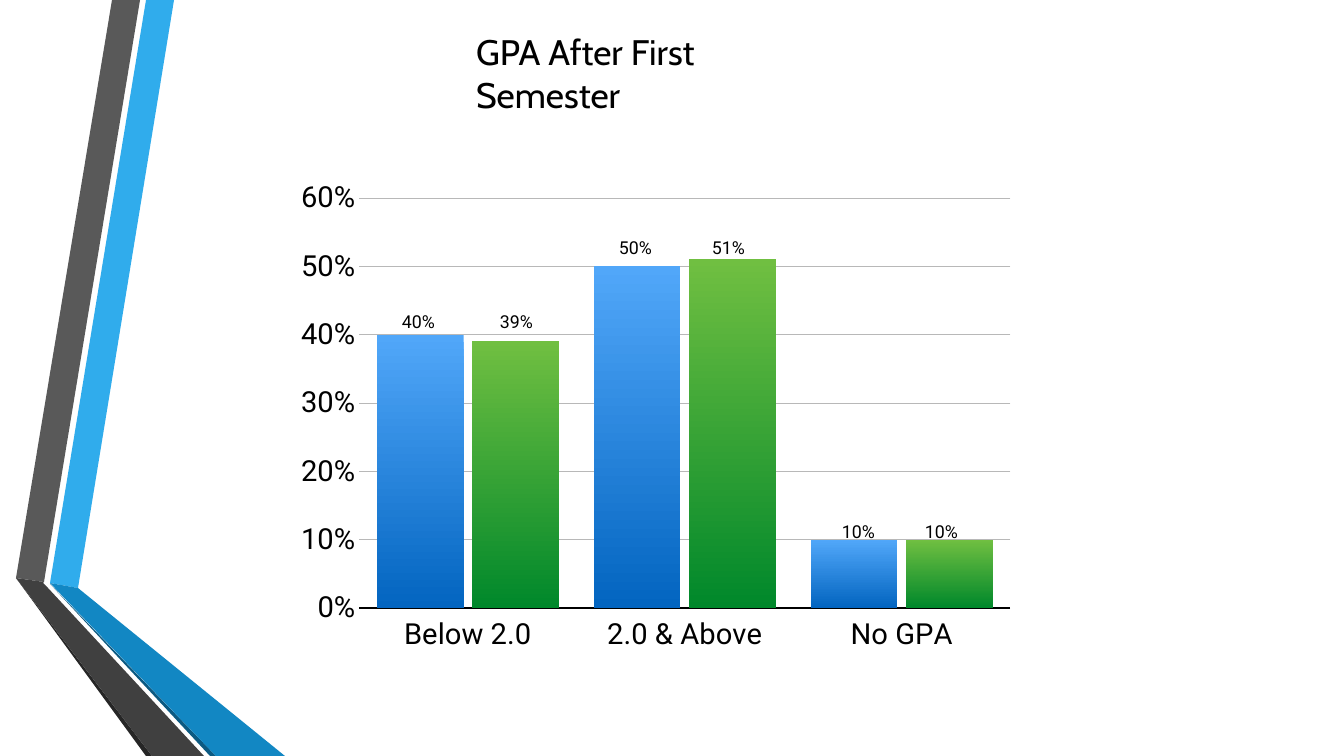
import lxml.etree
import pptx
import pptx.chart.data
import pptx.dml.color
import pptx.enum.chart
import pptx.enum.text
import pptx.oxml.ns
import pptx.util

RGBColor = pptx.dml.color.RGBColor
Pt = pptx.util.Pt
EMU_PER_PX = 914400 / 100.8

BLACK = RGBColor(0x00, 0x00, 0x00)
GRID_GREY = RGBColor(0xB8, 0xB8, 0xB8)
SKY = RGBColor(0x30, 0xAC, 0xEC)
BLUE = RGBColor(0x12, 0x87, 0xC3)
DEEP_BLUE = RGBColor(0x0C, 0x5A, 0x82)
GREY = RGBColor(0x59, 0x59, 0x59)
DARK_GREY = RGBColor(0x40, 0x40, 0x40)
CHARCOAL = RGBColor(0x26, 0x26, 0x26)
BLUE_BAR = (RGBColor(0x51, 0xA7, 0xF9), RGBColor(0x03, 0x65, 0xC0))
GREEN_BAR = (RGBColor(0x70, 0xBF, 0x41), RGBColor(0x00, 0x88, 0x2B))


def px(length):
    return pptx.util.Emu(round(length * EMU_PER_PX))


def add_label(text, box, font_name, size, margin, wrap, anchor):
    label = slide.shapes.add_textbox(*map(px, box))
    frame = label.text_frame
    frame.margin_left = frame.margin_right = px(margin)
    frame.margin_top = frame.margin_bottom = px(margin)
    frame.word_wrap = wrap
    frame.vertical_anchor = anchor
    paragraph = frame.paragraphs[0]
    paragraph.text = text
    paragraph.font.name = font_name
    paragraph.font.size = Pt(size)
    paragraph.font.color.rgb = BLACK


presentation = pptx.Presentation()
presentation.slide_width = px(1344)
presentation.slide_height = px(756)
slide = presentation.slides.add_slide(presentation.slide_layouts[6])

# Folded ribbons on the left edge
ribbons = [
    (SKY, [(50, 583), (78, 588), (174, 0), (146, 0)]),
    (GREY, [(140, 0), (112, 0), (16, 578), (44, 582)]),
    (CHARCOAL, [(16, 578), (146, 756), (152, 756)]),
    (DEEP_BLUE, [(50, 584), (210, 756), (216, 756)]),
    (BLUE, [(50, 583), (216, 756), (285, 756), (78, 588)]),
    (DARK_GREY, [(204, 756), (48, 588), (43, 583), (44, 582), (16, 578), (152, 756)]),
]
for color, points in ribbons:
    outline = slide.shapes.build_freeform(*points[0], scale=EMU_PER_PX)
    outline.add_line_segments(points[1:], close=True)
    ribbon = outline.convert_to_shape()
    ribbon.shadow.inherit = False
    ribbon.fill.solid()
    ribbon.fill.fore_color.rgb = color
    ribbon.line.fill.background()

# GPA chart
gpa_data = pptx.chart.data.CategoryChartData(number_format="0%")
gpa_data.categories = ["Below 2.0", "2.0 & Above", "No GPA"]
for shares in ([0.4, 0.5, 0.1], [0.39, 0.51, 0.1]):
    gpa_data.add_series("", shares)
gpa_chart = slide.shapes.add_chart(
    pptx.enum.chart.XL_CHART_TYPE.COLUMN_CLUSTERED,
    px(301), px(159), px(710), px(493), gpa_data).chart
gpa_chart.has_title = False
gpa_chart.has_legend = False
gpa_chart.font.name = "Cabin"
gpa_chart.font.size = Pt(10)
gpa_chart.font.color.rgb = BLACK

bars = gpa_chart.plots[0]
bars.gap_width = 40
bars.overlap = -10
bars.vary_by_categories = False
for series, shades in zip(bars.series, (BLUE_BAR, GREEN_BAR)):
    fill = series.format.fill
    fill.gradient()
    fill.gradient_angle = 270
    for stop, position, shade in zip(fill.gradient_stops, (0, 1), shades):
        stop.position = position
        stop.color.rgb = shade
    series.format.line.fill.background()

groups, percents = gpa_chart.category_axis, gpa_chart.value_axis
for axis in (groups, percents):
    axis.major_tick_mark = axis.minor_tick_mark = pptx.enum.chart.XL_TICK_MARK.NONE
    axis.tick_labels.font.name = "Roboto"
    axis.tick_labels.font.size = Pt(20.9)
    axis.tick_labels.font.color.rgb = BLACK
    axis.tick_labels.number_format = "0%"
    axis.tick_labels.number_format_is_linked = False
groups.tick_label_position = pptx.enum.chart.XL_TICK_LABEL_POSITION.LOW
groups.format.line.color.rgb = BLACK
groups.format.line.width = Pt(1)
percents.minimum_scale, percents.maximum_scale = 0, 0.6
percents.major_unit = 0.1
percents.format.line.fill.background()
percents.has_major_gridlines = True
percents.major_gridlines.format.line.color.rgb = GRID_GREY
percents.major_gridlines.format.line.width = Pt(0.25)

# Fixed inner plot area, as fractions of the chart
qn = pptx.oxml.ns.qn
plot_area = bars._element.getparent()
for old_layout in plot_area.findall(qn("c:layout")):
    plot_area.remove(old_layout)
layout = lxml.etree.Element(qn("c:layout"))
plot_area.insert(0, layout)
manual = lxml.etree.SubElement(layout, qn("c:manualLayout"))
for tag, value in [("layoutTarget", "inner"), ("xMode", "edge"), ("yMode", "edge"),
                   ("x", "0.08"), ("y", "0.08"), ("w", "0.92"), ("h", "0.84")]:
    lxml.etree.SubElement(manual, qn("c:" + tag)).set("val", value)

# Percentages above the bars
percent_labels = [("40%", 402, 311), ("39%", 500, 311), ("50%", 619, 237),
                  ("51%", 712, 237), ("10%", 842, 521), ("10%", 925, 521)]
for text, left, top in percent_labels:
    add_label(text, (left, top, 35, 21), "Roboto", 12.7, 0, False,
              pptx.enum.text.MSO_ANCHOR.TOP)

add_label("GPA After First Semester", (472, 48, 375, 50), "Cabin", 25.3, 4, True,
          pptx.enum.text.MSO_ANCHOR.MIDDLE)

presentation.save("out.pptx")
